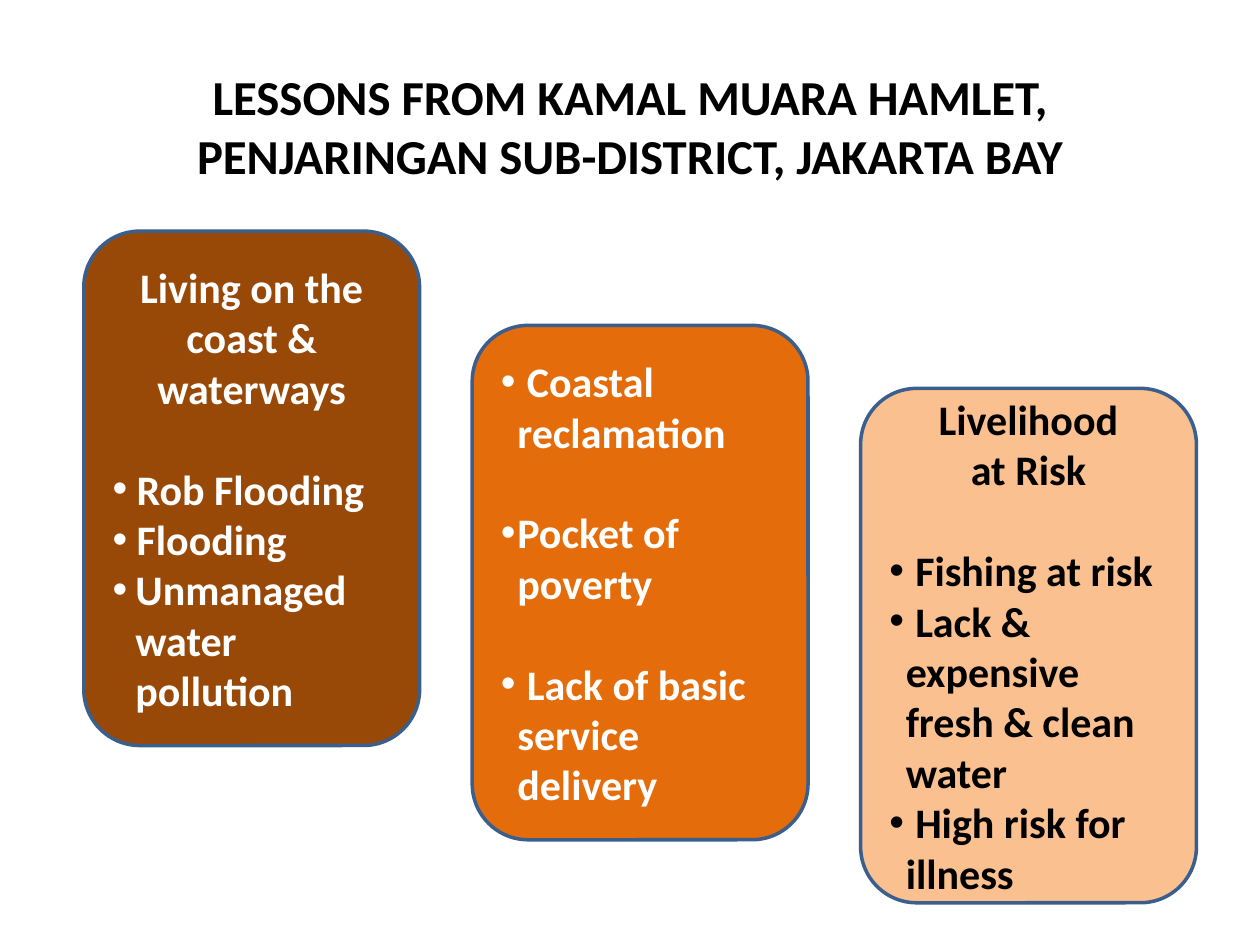
"""Build the slide on lessons from Kamal Muara hamlet."""
from dataclasses import dataclass

from lxml.etree import SubElement
from pptx import Presentation
from pptx.dml.color import RGBColor
from pptx.enum.shapes import MSO_SHAPE as Shape
from pptx.enum.text import MSO_ANCHOR as Anchor, MSO_AUTO_SIZE as AutoSize, PP_ALIGN as Align
from pptx.oxml.ns import qn
from pptx.util import Cm, Pt

BLACK = RGBColor(0x00, 0x00, 0x00)
WHITE = RGBColor(0xFF, 0xFF, 0xFF)
BROWN = RGBColor(0x98, 0x48, 0x07)
ORANGE = RGBColor(0xE4, 0x6C, 0x0A)
PEACH = RGBColor(0xFA, 0xC0, 0x90)
OUTLINE = RGBColor(0x3A, 0x5F, 0x8C)

FONT = "Calibri"
BLANK_LINE = 28.8
CARD_LEFT, CARD_PITCH = 1.69, 7.83
CARD_WIDTH, CARD_HEIGHT = 6.77, 10.37


@dataclass(frozen=True)
class Line:
    text: str
    bullet: bool = True
    hanging: float = 0.33
    gap: float = 0


@dataclass(frozen=True)
class Card:
    top: float
    fill: RGBColor
    ink: RGBColor
    lines: tuple[Line, ...]


CARDS = (
    Card(4.66, BROWN, WHITE, (
        Line("Living on the coast & waterways", bullet=False, hanging=0),
        Line(" Rob Flooding", hanging=0, gap=BLANK_LINE),
        Line(" Flooding", hanging=0),
        Line("Unmanaged water pollution", hanging=0.46),
    )),
    Card(6.56, ORANGE, WHITE, (
        Line(" Coastal reclamation"),
        Line("Pocket of poverty", gap=BLANK_LINE),
        Line(" Lack of basic service delivery", gap=BLANK_LINE),
    )),
    Card(7.83, PEACH, BLACK, (
        Line("Livelihood", bullet=False),
        Line("at Risk", bullet=False),
        Line(" Fishing at risk", gap=BLANK_LINE),
        Line(" Lack & expensive fresh & clean water"),
        Line(" High risk for illness"),
    )),
)


def write(paragraph, text: str, *, size: float, color: RGBColor, align=Align.CENTER,
          bullet: bool = False, hanging: float = 0, gap: float = 0) -> None:
    """Write bold text, one run per line, into a paragraph."""
    paragraph.alignment = align
    paragraph.space_before = Pt(gap)
    properties = paragraph._p.get_or_add_pPr()
    properties.set("marL", str(Cm(hanging)))
    properties.set("indent", str(-Cm(hanging)))
    if bullet:
        SubElement(properties, qn("a:buFont"), typeface="Arial")
        SubElement(properties, qn("a:buChar"), char="•")
    for index, row in enumerate(text.splitlines()):
        if index:
            paragraph.add_line_break()
        run = paragraph.add_run()
        run.text = row
        run.font.name = FONT
        run.font.size = Pt(size)
        run.font.bold = True
        run.font.color.rgb = color


def draw_title(slide, text: str) -> None:
    """Place the heading in the title placeholder."""
    title = slide.shapes.title
    title.left, title.top, title.width, title.height = Cm(1.27), Cm(1.7), Cm(22.86), Cm(3.18)
    frame = title.text_frame
    frame.auto_size = AutoSize.NONE
    frame.vertical_anchor = Anchor.MIDDLE
    frame.margin_bottom = Cm(1.65)
    write(frame.paragraphs[0], text, size=27.9, color=BLACK)


def draw_card(slide, card: Card, column: int) -> None:
    """Draw one rounded card with its lines."""
    box = slide.shapes.add_shape(
        Shape.ROUNDED_RECTANGLE, Cm(CARD_LEFT + column * CARD_PITCH), Cm(card.top),
        Cm(CARD_WIDTH), Cm(CARD_HEIGHT))
    box.shadow.inherit = False
    box.fill.solid()
    box.fill.fore_color.rgb = card.fill
    box.line.color.rgb = OUTLINE
    box.line.width = Pt(2)
    frame = box.text_frame
    frame.word_wrap = True
    frame.vertical_anchor = Anchor.MIDDLE
    for index, line in enumerate(card.lines):
        paragraph = frame.add_paragraph() if index else frame.paragraphs[0]
        write(paragraph, line.text, size=24, color=card.ink,
              align=Align.LEFT if line.bullet else Align.CENTER,
              bullet=line.bullet, hanging=line.hanging, gap=line.gap)


def main() -> None:
    """Build and save the presentation."""
    deck = Presentation()
    deck.slide_width, deck.slide_height = Cm(25.4), Cm(19.05)
    slide = deck.slides.add_slide(deck.slide_layouts[5])
    draw_title(slide, """LESSONS FROM KAMAL MUARA HAMLET,
PENJARINGAN SUB-DISTRICT, JAKARTA BAY""")
    for column, card in enumerate(CARDS):
        draw_card(slide, card, column)
    deck.save("out.pptx")


if __name__ == "__main__":
    main()
